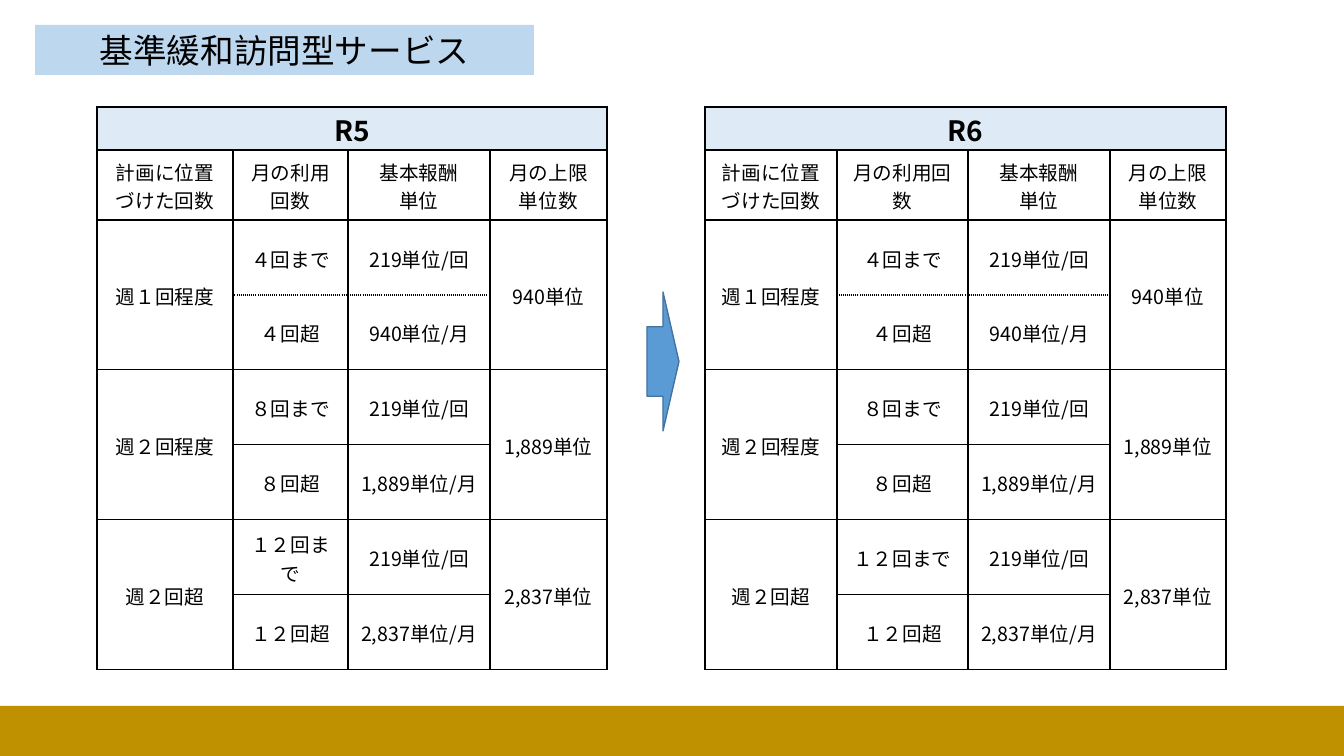
from pptx import Presentation
from pptx.dml.color import RGBColor
from pptx.enum.shapes import MSO_SHAPE as SHAPE
from pptx.enum.text import MSO_ANCHOR as ANCHOR, PP_ALIGN as ALIGN
from pptx.oxml.ns import qn
from pptx.util import Pt
from lxml.etree import SubElement

PX = 12192000 // 1344
FONT = "Noto Sans CJK JP"
COLORS = {"title": "BDD7EE", "header": "DEEBF7", "arrow": "5B9BD5",
          "arrow_edge": "43739E", "footer": "BF9000", "ink": "000000"}


def write(frame, text, size, bold=False):
    """Fill a text frame with centred lines in the slide's font."""
    frame.text = text
    for paragraph in frame.paragraphs:
        paragraph.alignment = ALIGN.CENTER
        for run in paragraph.runs:
            format_values = {"name": FONT, "size": Pt(size), "bold": bold}
            for attribute, value in format_values.items():
                setattr(run.font, attribute, value)
            run.font.color.rgb = RGBColor.from_string(COLORS["ink"])
            SubElement(run.font._element, qn("a:ea"), typeface=FONT)


def draw_borders(cell, row, col):
    """Black rules: thick under the headings, dotted inside the first group."""
    properties = cell._tc.get_or_add_tcPr()
    # Each side with the number of the row line it lies on
    sides = (("lnL", None), ("lnR", None), ("lnT", row), ("lnB", row + 1))
    for position, (side, row_line) in enumerate(sides):
        width = Pt(2.25) if row_line == 2 else Pt(1)
        dotted = row_line == 3 and col in (1, 2)
        line = SubElement(properties, qn("a:" + side), w=str(width))
        properties.remove(line)
        properties.insert(position, line)
        fill = SubElement(line, qn("a:solidFill"))
        SubElement(fill, qn("a:srgbClr"), val=COLORS["ink"])
        SubElement(line, qn("a:prstDash"), val="sysDot" if dotted else "solid")


presentation = Presentation()
presentation.slide_width, presentation.slide_height = 1344 * PX, 756 * PX
slide = presentation.slides.add_slide(presentation.slide_layouts[6])

# Title, arrow between the years, footer band
blocks = [
    (SHAPE.RECTANGLE, (35, 25, 499, 50), "title", None, "基準緩和訪問型サービス"),
    (SHAPE.RIGHT_ARROW, (647, 292, 32, 139), "arrow", "arrow_edge", ""),
    (SHAPE.RECTANGLE, (0, 706, 1344, 50), "footer", None, ""),
]
for kind, box, color, edge, text in blocks:
    block = slide.shapes.add_shape(kind, *(length * PX for length in box))
    block.shadow.inherit = False
    block.fill.solid()
    block.fill.fore_color.rgb = RGBColor.from_string(COLORS[color])
    if edge:
        block.line.color.rgb = RGBColor.from_string(COLORS[edge])
        block.line.width = Pt(1)
    else:
        block.line.fill.background()
    if text:
        block.text_frame.vertical_anchor = ANCHOR.MIDDLE
        write(block.text_frame, text, 24)

# Fee tables of the two years
headings = ["計画に位置づけた回数", "月の利用回数", "基本報酬\n単位", "月の上限単位数"]
plans = [("週１回程度", "４回", "940単位"),
         ("週２回程度", "８回", "1,889単位"),
         ("週２回超", "１２回", "2,837単位")]
body = [headings]
for plan, count, limit in plans:
    body.append([plan, count + "まで", "219単位/回", limit])
    body.append(["", count + "超", limit + "/月", ""])

row_heights = [43, 70] + [75] * 6
years = [("R5", 97, [136, 115, 142, 117]), ("R6", 705, [132, 131, 142, 116])]
for year, left, col_widths in years:
    table = slide.shapes.add_table(
        len(row_heights), len(col_widths), left * PX, 107 * PX,
        sum(col_widths) * PX, sum(row_heights) * PX).table
    table.first_row = table.horz_banding = False
    for column, width in zip(table.columns, col_widths):
        column.width = width * PX
    for table_row, height in zip(table.rows, row_heights):
        table_row.height = height * PX

    for row, texts in enumerate([[year, "", "", ""]] + body):
        for col, text in enumerate(texts):
            cell = table.cell(row, col)
            cell.vertical_anchor = ANCHOR.MIDDLE
            cell.margin_top, cell.margin_bottom = 2 * PX, 0
            if row == 0:
                cell.fill.solid()
                cell.fill.fore_color.rgb = RGBColor.from_string(COLORS["header"])
            else:
                cell.fill.background()
            write(cell.text_frame, text, 14 if row else 20, bold=row == 0)
            draw_borders(cell, row, col)

    table.cell(0, 0).merge(table.cell(0, 3))
    for row in range(2, 8, 2):
        for col in (0, 3):
            table.cell(row, col).merge(table.cell(row + 1, col))

presentation.save("out.pptx")
